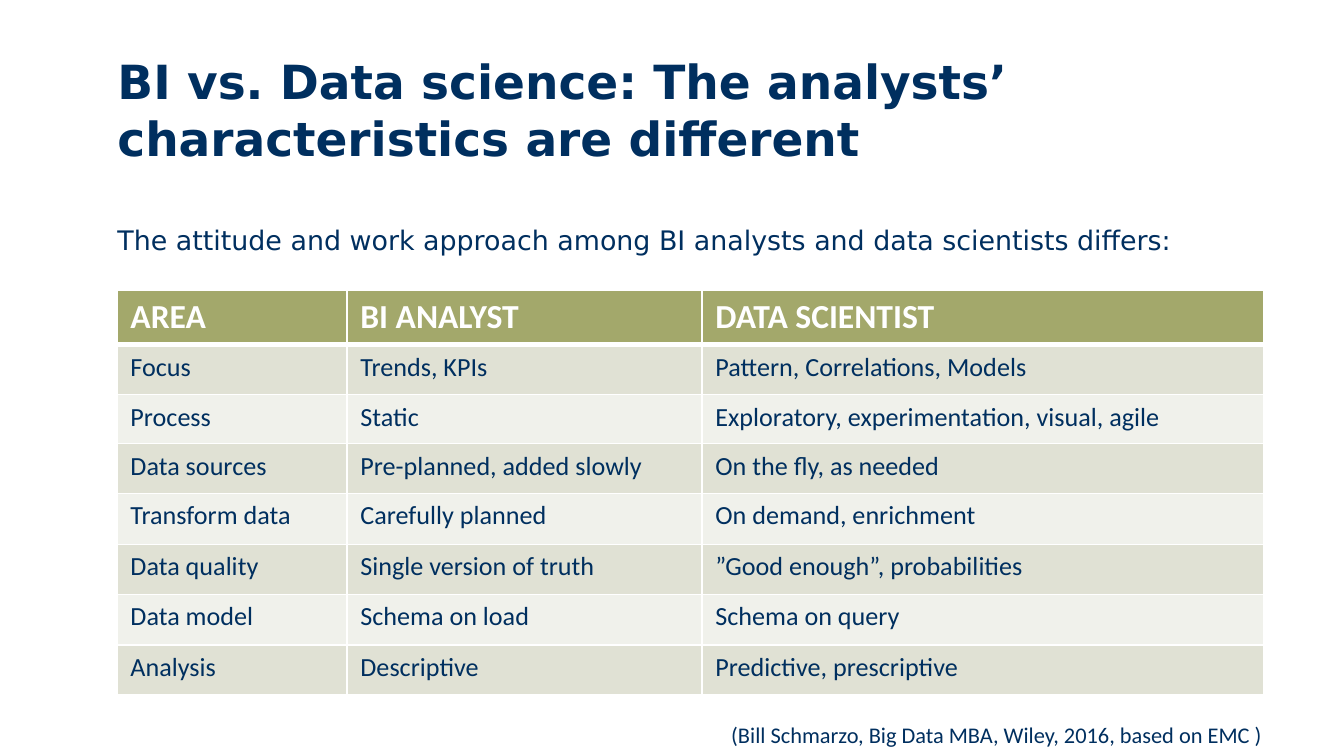
from dataclasses import dataclass

import pptx
import pptx.dml.color
import pptx.enum.text
import pptx.oxml.ns
import pptx.util
from lxml import etree

PX = 914400 / 134.4  # EMU per px
COLORS = {
    "navy": "002F5F",
    "white": "FFFFFF",
    "olive": "A3A86B",
    "band_dark": "E0E1D4",
    "band_light": "F0F1EB",
}


@dataclass
class Style:
    size: float
    font: str = "Calibri"
    color: str = "navy"
    bold: bool = False


@dataclass
class Row:
    height: int
    cells: tuple[str, str, str]


TITLE = Style(25.2, "DejaVu Sans", bold=True)
LEAD = Style(14.4, "DejaVu Sans")
HEADER = Style(18, color="white", bold=True)
BODY = Style(14)
SOURCE = Style(12)

COLUMNS = (230, 355, 562)
ROWS = (
    Row(51, ("AREA", "BI ANALYST", "DATA SCIENTIST")),
    Row(50, ("Focus", "Trends, KPIs", "Pattern, Correlations, Models")),
    Row(49, ("Process", "Static", "Exploratory, experimentation, visual, agile")),
    Row(50, ("Data sources", "Pre-planned, added slowly", "On the fly, as needed")),
    Row(51, ("Transform data", "Carefully planned", "On demand, enrichment")),
    Row(50, ("Data quality", "Single version of truth", "”Good enough”, probabilities")),
    Row(51, ("Data model", "Schema on load", "Schema on query")),
    Row(50, ("Analysis", "Descriptive", "Predictive, prescriptive")),
)


def px(n: int) -> pptx.util.Emu:
    return pptx.util.Emu(round(n * PX))


def rgb(name: str) -> pptx.dml.color.RGBColor:
    return pptx.dml.color.RGBColor.from_string(COLORS[name])


def write(p, text: str, style: Style) -> None:
    p.text = text
    p.font.size = pptx.util.Pt(style.size)
    p.font.name = style.font
    p.font.bold = style.bold
    p.font.color.rgb = rgb(style.color)


def add_borders(cell, bottom: int) -> None:
    """White cell edges; they must stand before the fill."""
    tc_pr = cell._tc.get_or_add_tcPr()
    qn = pptx.oxml.ns.qn
    for i, (side, width) in enumerate((("L", 1), ("R", 1), ("T", 1), ("B", bottom))):
        ln = etree.Element(qn(f"a:ln{side}"), w=str(pptx.util.Pt(width)))
        fill = etree.SubElement(ln, qn("a:solidFill"))
        etree.SubElement(fill, qn("a:srgbClr"), val=COLORS["white"])
        tc_pr.insert(i, ln)


def add_title(slide) -> None:
    sp = slide.shapes.title
    sp.left, sp.top, sp.width, sp.height = px(104), px(46), px(1227), px(87)
    tf = sp.text_frame
    tf.word_wrap = True
    tf.auto_size = pptx.enum.text.MSO_AUTO_SIZE.NONE
    tf.vertical_anchor = pptx.enum.text.MSO_ANCHOR.TOP
    p = tf.paragraphs[0]
    write(p, "BI vs. Data science: The analysts’ characteristics are different", TITLE)
    lead = tf.add_paragraph()
    write(lead, "The attitude and work approach among BI analysts "
                "and data scientists differs:", LEAD)
    lead.space_before = pptx.util.Pt(31)
    for p in tf.paragraphs:
        p.alignment = pptx.enum.text.PP_ALIGN.LEFT


def add_comparison(slide) -> None:
    height = sum(row.height for row in ROWS)
    table = slide.shapes.add_table(len(ROWS), len(COLUMNS), px(117), px(290),
                                   px(sum(COLUMNS)), px(height)).table
    for column, width in zip(table.columns, COLUMNS):
        column.width = px(width)
    for i, row in enumerate(ROWS):
        table.rows[i].height = px(row.height)
        fill = "olive" if i == 0 else "band_dark" if i % 2 else "band_light"
        for j, text in enumerate(row.cells):
            cell = table.cell(i, j)
            write(cell.text_frame.paragraphs[0], text, BODY if i else HEADER)
            cell.fill.solid()
            cell.fill.fore_color.rgb = rgb(fill)
            add_borders(cell, bottom=1 if i else 3)


def add_source(slide) -> None:
    tf = slide.shapes.add_textbox(px(718), px(715), px(564), px(41)).text_frame
    tf.word_wrap = False
    tf.auto_size = pptx.enum.text.MSO_AUTO_SIZE.SHAPE_TO_FIT_TEXT
    write(tf.paragraphs[0],
          "(Bill Schmarzo, Big Data MBA, Wiley, 2016, based on EMC )", SOURCE)


def main() -> None:
    prs = pptx.Presentation()
    prs.slide_width, prs.slide_height = px(1344), px(756)
    slide = prs.slides.add_slide(prs.slide_layouts[5])  # Title Only
    add_title(slide)
    add_comparison(slide)
    add_source(slide)
    prs.save("out.pptx")


if __name__ == "__main__":
    main()
